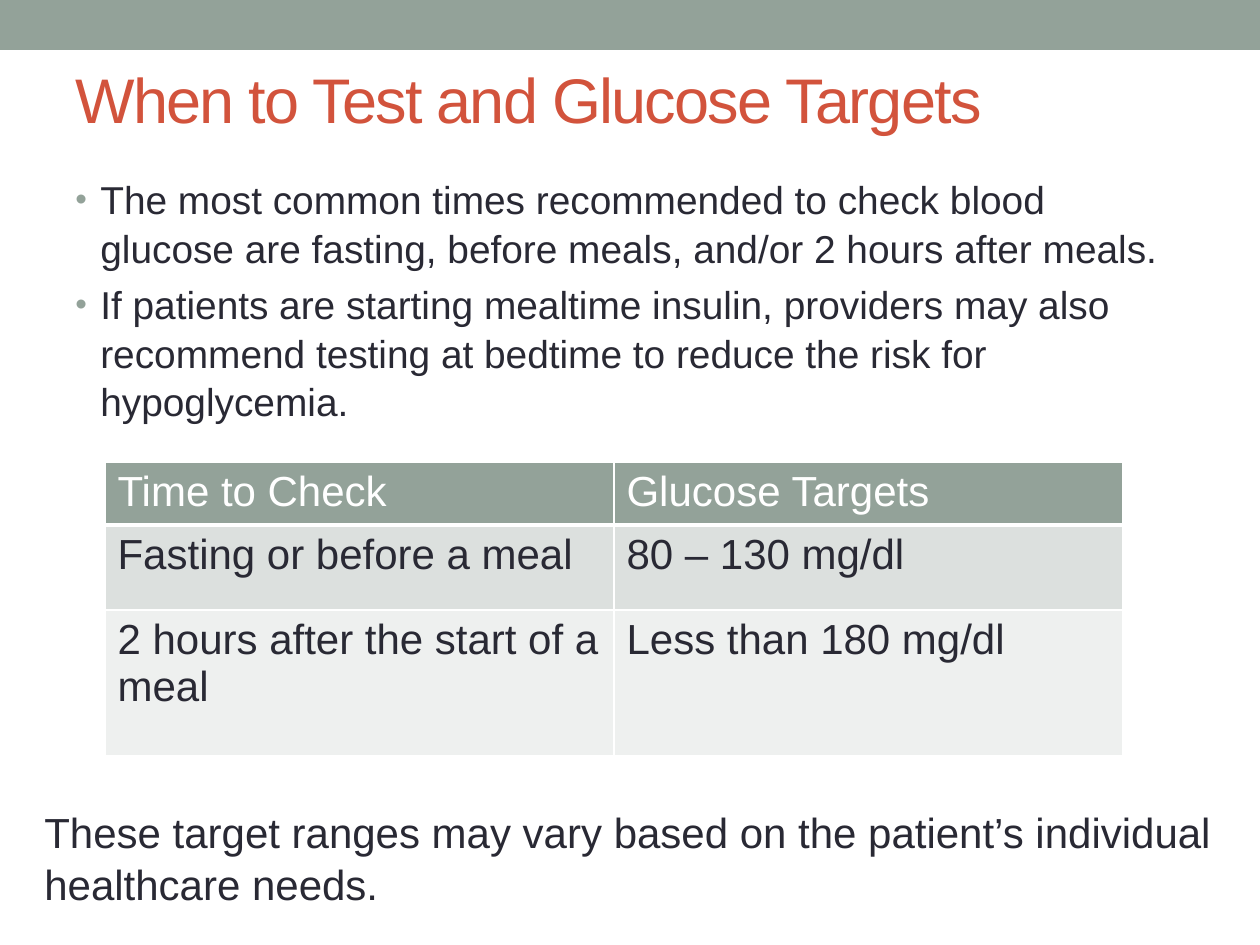
from dataclasses import dataclass

from lxml import etree
from pptx import Presentation
from pptx.dml.color import RGBColor
from pptx.enum.shapes import MSO_SHAPE
from pptx.enum.text import MSO_ANCHOR
from pptx.oxml.ns import qn
from pptx.util import Pt

RECT = MSO_SHAPE.RECTANGLE
TOP, MIDDLE = MSO_ANCHOR.TOP, MSO_ANCHOR.MIDDLE
PX = 914400 / 126  # EMU in one px


@dataclass(frozen=True)
class Theme:
    font: str = "Arial"
    sage: str = "93A299"
    rust: str = "D2533C"
    ink: str = "292934"
    white: str = "FFFFFF"
    bands: tuple = ("DCE0DE", "EEF0EF")
    title: float = 36
    body: float = 22.2
    text: float = 24
    leading: float = 1.04


def emu(*lengths):
    return [round(n * PX) for n in lengths]


def rgb(color):
    return RGBColor.from_string(color)


def write(p, text, *, font, size, color, spacing=None, leading=None, before=None):
    r = p.add_run()
    r.text = text
    r.font.name, r.font.size, r.font.bold = font, Pt(size), False
    r.font.color.rgb = rgb(color)
    if spacing is not None:
        r._r.get_or_add_rPr().set("spc", str(spacing * 100))
    if leading is not None:
        p.line_spacing = leading
    if before is not None:
        p.space_before = Pt(before)


class Deck:
    def __init__(self, theme, width, height):
        self.theme = theme
        self.prs = Presentation()
        self.prs.slide_width, self.prs.slide_height = emu(width, height)
        self.s = None

    def add_slide(self):
        self.s = self.prs.slides.add_slide(self.prs.slide_layouts[6])

    def bar(self, *box, color):
        sp = self.s.shapes.add_shape(RECT, *emu(*box))
        sp.shadow.inherit = False
        sp.fill.solid()
        sp.fill.fore_color.rgb = rgb(color)
        sp.line.fill.background()

    def text(self, *box, lines, size, color, anchor=TOP, bullet=False, **fmt):
        tf = self.s.shapes.add_textbox(*emu(*box)).text_frame
        tf.word_wrap = True
        tf.vertical_anchor = anchor
        for i, line in enumerate(lines):
            p = tf.paragraphs[0] if i == 0 else tf.add_paragraph()
            write(p, line, font=self.theme.font, size=size, color=color, **fmt)
            if bullet:
                self.bullet(p)

    def bullet(self, p):
        indent = emu(25)[0]
        pPr = p._p.get_or_add_pPr()
        pPr.set("marL", str(indent))
        pPr.set("indent", str(-indent))
        color = etree.SubElement(pPr, qn("a:buClr"))
        etree.SubElement(color, qn("a:srgbClr"), val=self.theme.sage)
        etree.SubElement(pPr, qn("a:buSzPct"), val="85000")
        etree.SubElement(pPr, qn("a:buFont"), typeface=self.theme.font)
        etree.SubElement(pPr, qn("a:buChar"), char="•")

    def table(self, left, top, cols, heights, rows):
        t = self.theme
        box = emu(left, top, sum(cols), sum(heights))
        table = self.s.shapes.add_table(len(rows), len(cols), *box).table
        table.horz_banding = False
        for col, width in zip(table.columns, emu(*cols)):
            col.width = width
        for i, (row, height) in enumerate(zip(rows, emu(*heights))):
            table.rows[i].height = height
            header = i == 0
            fill = t.sage if header else t.bands[(i - 1) % 2]
            for j, value in enumerate(row):
                cell = table.cell(i, j)
                cell.fill.solid()
                cell.fill.fore_color.rgb = rgb(fill)
                write(cell.text_frame.paragraphs[0], value, font=t.font,
                      size=t.text, color=t.white if header else t.ink)
                self.borders(cell, bottom=3 if header else 1)

    def borders(self, cell, bottom):
        tcPr = cell._tc.get_or_add_tcPr()
        sides = {"a:lnL": 1, "a:lnR": 1, "a:lnT": 1, "a:lnB": bottom}
        for i, (tag, width) in enumerate(sides.items()):
            ln = etree.Element(qn(tag), w=str(Pt(width)))
            fill = etree.SubElement(ln, qn("a:solidFill"))
            etree.SubElement(fill, qn("a:srgbClr"), val=self.theme.white)
            tcPr.insert(i, ln)


def main():
    t = Theme()
    deck = Deck(t, 1260, 945)
    deck.add_slide()

    # Top band and title
    deck.bar(0, 0, 1260, 50, color=t.sage)
    deck.text(63, 38, 1134, 120, lines=["When to Test and Glucose Targets"],
              size=t.title, color=t.rust, anchor=MIDDLE, spacing=-1)

    # Testing advice
    deck.text(63, 168, 1134, 284, lines=[
        "The most common times recommended to check blood glucose are fasting, "
        "before meals, and/or 2 hours after meals.",
        "If patients are starting mealtime insulin, providers may also recommend "
        "testing at bedtime to reduce the risk for hypoglycemia.",
    ], size=t.body, color=t.ink, bullet=True, leading=t.leading, before=t.body * 0.2)

    # Glucose targets
    deck.table(105, 462, cols=[509, 509], heights=[58, 85, 146], rows=[
        ("Time to Check", "Glucose Targets"),
        ("Fasting or before a meal", "80 – 130 mg/dl"),
        ("2 hours after the start of a meal", "Less than 180 mg/dl"),
    ])

    # Closing note
    deck.text(32, 798, 1207, 115, lines=[
        "These target ranges may vary based on the patient’s individual "
        "healthcare needs.",
    ], size=t.text, color=t.ink, leading=t.leading)

    deck.prs.save("out.pptx")


if __name__ == "__main__":
    main()
